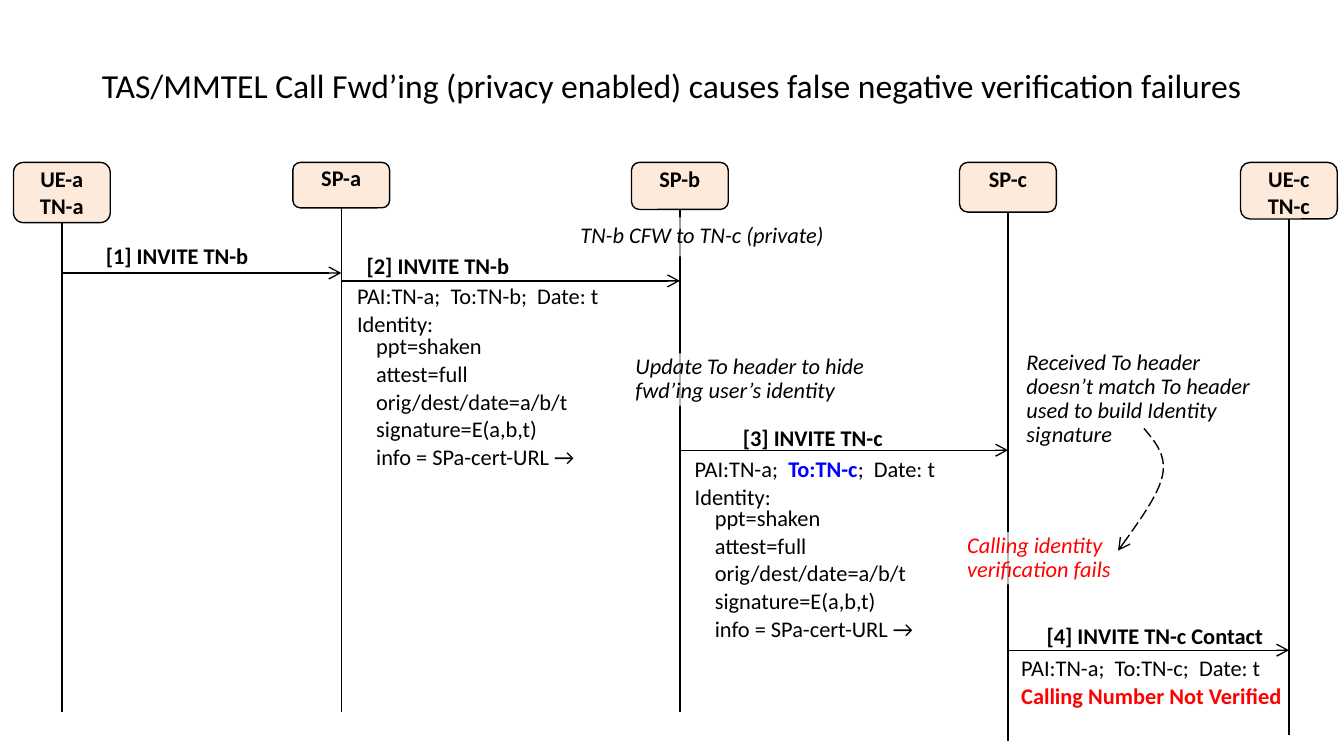
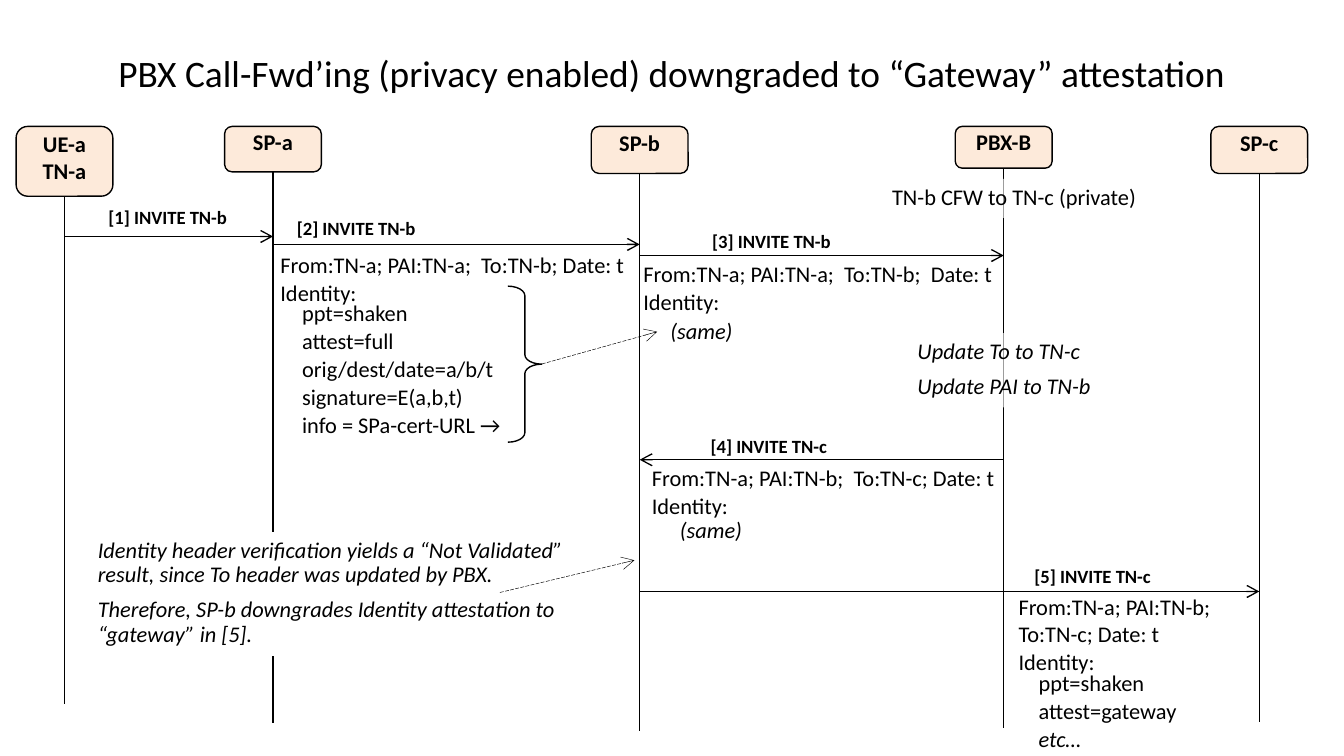
import lxml.etree
import pptx
import pptx.dml.color
import pptx.enum.dml
import pptx.enum.shapes
import pptx.enum.text
import pptx.oxml.ns
import pptx.util

Cm = pptx.util.Cm
Pt = pptx.util.Pt
qn = pptx.oxml.ns.qn

BLACK, WHITE, PEACH, RED, BLUE = "000000", "FFFFFF", "FDEADA", "FF0000", "0000FF"
FONT = "Calibri"
NODE_WIDTH = 1.83
SHAKEN_CLAIMS = ["ppt=shaken", "attest=full", "orig/dest/date=a/b/t",
                 "signature=E(a,b,t)", "info = SPa-cert-URL →"]


def rgb(hex_colour):
    return pptx.dml.color.RGBColor.from_string(hex_colour)


def bezier(start, control_1, control_2, end, steps=12):
    """Return points along a cubic curve, without its start."""
    points = []
    for step in range(1, steps + 1):
        t = step / steps
        weights = ((1 - t) ** 3, 3 * t * (1 - t) ** 2, 3 * t ** 2 * (1 - t), t ** 3)
        corners = (start, control_1, control_2, end)
        points.append(tuple(sum(w * corner[axis] for w, corner in zip(weights, corners))
                            for axis in (0, 1)))
    return points


class CallFlow:
    """Draws call-flow slides; all positions are in centimetres."""

    def __init__(self):
        self.deck = pptx.Presentation()
        self.deck.slide_width, self.deck.slide_height = Cm(25.4), Cm(14.29)
        self.shapes = None
        self.node_top = 0
        self.label_size = 12
        self.lifelines = []

    def start_slide(self, title, title_top, title_size, node_top, label_size):
        self.shapes = self.deck.slides.add_slide(self.deck.slide_layouts[6]).shapes
        self.node_top, self.label_size = node_top, label_size
        self.lifelines = []
        heading = self.shapes.add_textbox(Cm(1.27), Cm(title_top), Cm(22.86), Cm(2.39))
        heading.text_frame.word_wrap = True
        heading.text_frame.vertical_anchor = pptx.enum.text.MSO_ANCHOR.MIDDLE
        paragraph = heading.text_frame.paragraphs[0]
        paragraph.text = title
        paragraph.alignment = pptx.enum.text.PP_ALIGN.CENTER
        self.style_font(paragraph.font, size=title_size)

    def style_font(self, font, size=12, colour=BLACK, bold=False, italic=False):
        font.name, font.size = FONT, Pt(size)
        font.bold, font.italic = bold, italic
        font.color.rgb = rgb(colour)

    def style_line(self, outlined, width=0.75, dashed=False, arrow=False):
        line = outlined.line
        line.color.rgb = rgb(BLACK)
        line.width = Pt(width)
        if dashed:
            line.dash_style = pptx.enum.dml.MSO_LINE.LONG_DASH
        if arrow:
            outline = outlined.element.spPr.find(qn("a:ln"))
            lxml.etree.SubElement(outline, qn("a:tailEnd"), type="arrow")

    def line(self, start, end, **style):
        connector = self.shapes.add_connector(
            pptx.enum.shapes.MSO_CONNECTOR.STRAIGHT, *map(Cm, (*start, *end)))
        self.style_line(connector, **style)
        lxml.etree.SubElement(connector.element.spPr, qn("a:effectLst"))

    def pointer(self, start, end):
        self.line(start, end, width=0.25, dashed=True, arrow=True)

    def curved_pointer(self, start, *curves):
        points = [start]
        for curve in curves:
            points += bezier(points[-1], *curve)
        points = [(Cm(x), Cm(y)) for x, y in points]
        builder = self.shapes.build_freeform(*points[0])
        builder.add_line_segments(points[1:], close=False)
        pointer = builder.convert_to_shape()
        pointer.fill.background()
        pointer.shadow.inherit = False
        self.style_line(pointer, dashed=True, arrow=True)

    def preset(self, kind, left, top, width, height):
        shape = self.shapes.add_shape(kind, Cm(left), Cm(top), Cm(width), Cm(height))
        shape.shadow.inherit = False
        self.style_line(shape)
        return shape

    def brace(self, left, top, width, height):
        brace = self.preset(pptx.enum.shapes.MSO_SHAPE.RIGHT_BRACE, left, top, width, height)
        brace.fill.background()
        brace.adjustments[0], brace.adjustments[1] = 0.28, 0.5

    def node(self, names, centre, height, lifeline_end):
        """Draw a network element and the lifeline below it."""
        node = self.preset(pptx.enum.shapes.MSO_SHAPE.ROUNDED_RECTANGLE,
                           centre - NODE_WIDTH / 2, self.node_top, NODE_WIDTH, height)
        node.fill.solid()
        node.fill.fore_color.rgb = rgb(PEACH)
        frame = node.text_frame
        self.set_frame(frame, 0, 0, wrap=False)
        frame.text = "\n".join(names)
        for paragraph in frame.paragraphs:
            paragraph.alignment = pptx.enum.text.PP_ALIGN.CENTER
            self.style_font(paragraph.font, bold=True)
        self.line((centre, self.node_top + height), (centre, lifeline_end))
        self.lifelines.append(centre)

    def message(self, sender, receiver, y, label, label_left, label_top, label_width=3.2):
        """Draw an arrow between two lifelines, given by index, and its label."""
        self.line((self.lifelines[sender], y), (self.lifelines[receiver], y), arrow=True)
        self.roomy_text(label_left, label_top, label_width, 0.7, [label],
                        size=self.label_size, bold=True)

    def set_frame(self, frame, side_inset, end_inset, wrap):
        frame.margin_left = frame.margin_right = Cm(side_inset)
        frame.margin_top = frame.margin_bottom = Cm(end_inset)
        frame.word_wrap = wrap
        frame.vertical_anchor = pptx.enum.text.MSO_ANCHOR.TOP

    def text(self, left, top, width, height, lines, inset=0.03, wrap=True,
             before=2, opacity=None, **style):
        """Write lines; a line is a string or a list of (text, style changes)."""
        box = self.shapes.add_textbox(Cm(left), Cm(top), Cm(width), Cm(height))
        if opacity is not None:
            box.fill.solid()
            box.fill.fore_color.rgb = rgb(WHITE)
            if opacity < 100:
                colour = box.element.spPr.find(".//" + qn("a:srgbClr"))
                lxml.etree.SubElement(colour, qn("a:alpha"), val=str(opacity * 1000))
        frame = box.text_frame
        self.set_frame(frame, 0.25, inset, wrap)
        frame.auto_size = pptx.enum.text.MSO_AUTO_SIZE.SHAPE_TO_FIT_TEXT
        for index, line in enumerate(lines):
            paragraph = frame.add_paragraph() if index else frame.paragraphs[0]
            paragraph.line_spacing = 0.9
            paragraph.space_before = Pt(before)
            pieces = [(line, {})] if isinstance(line, str) else line
            shared = pieces[0][1] if len(pieces) == 1 else {}
            self.style_font(paragraph.font, **{**style, **shared})
            for words, changes in pieces:
                run = paragraph.add_run()
                run.text = words
                if changes and not shared:
                    self.style_font(run.font, **{**style, **changes})

    def roomy_text(self, *place_and_lines, before=6, wrap=False, **options):
        self.text(*place_and_lines, inset=0.13, before=before, wrap=wrap, **options)


def draw_tas_forwarding(flow):
    flow.start_slide("TAS/MMTEL Call Fwd’ing (privacy enabled) causes false negative "
                     "verification failures", 0.41, 18, node_top=3.07, label_size=12)
    for node in ((["UE-a", "TN-a"], 1.17, 1.14, 13.46),
                 (["SP-a"], 6.45, 0.86, 13.46),
                 (["SP-b"], 12.85, 0.89, 13.46),
                 (["SP-c"], 19.05, 0.94, 14),
                 (["UE-c", "TN-c"], 24.36, 1.07, 13.89)):
        flow.node(*node)
    flow.roomy_text(10.72, 4.11, 5.26, 0.74, ["TN-b CFW to TN-c (private)"],
                    opacity=61, italic=True)

    flow.message(0, 1, 5.16, "[1] INVITE TN-b", 1.75, 4.5)
    flow.message(1, 2, 5.31, "[2] INVITE TN-b", 6.68, 4.7)
    flow.message(2, 3, 8.51, "[3] INVITE TN-c", 13.79, 7.95)
    flow.message(3, 4, 12.29, "[4] INVITE TN-c Contact", 19.53, 11.68, 4.65)

    flow.text(6.5, 5.36, 6.1, 1.07, ["PAI:TN-a;  To:TN-b;  Date: t", "Identity:"])
    updated_to = [("PAI:TN-a;  ", {}), ("To:TN-c", {"colour": BLUE, "bold": True}),
                  (";  Date: t", {})]
    flow.text(12.88, 8.64, 5.31, 1.07, [updated_to, "Identity:"])
    for left, top in ((6.86, 6.3), (13.26, 9.55)):
        flow.text(left, top, 4.93, 2.64, SHAKEN_CLAIMS)
    not_verified = [("Calling Number Not Verified", {"colour": RED, "bold": True})]
    flow.roomy_text(19.05, 12.29, 5.51, 1.27,
                    ["PAI:TN-a;  To:TN-c;  Date: t", not_verified], before=2)

    flow.text(11.76, 6.68, 4.93, 0.99, ["Update To header to hide fwd’ing user’s identity"],
              opacity=70, italic=True)
    flow.text(18.03, 10.06, 3.96, 0.99, ["Calling identity verification fails"],
              opacity=70, italic=True, colour=RED)
    flow.text(19.15, 6.6, 4.93, 1.91,
              ["Received To header doesn’t match To header used to build Identity signature"],
              opacity=70, italic=True)
    flow.curved_pointer((21.62, 8.1),
                        ((21.84, 8.36), (22.05, 8.61), (21.97, 8.99)),
                        ((21.89, 9.37), (21.51, 9.88), (21.13, 10.41)))


def draw_pbx_forwarding(flow):
    flow.start_slide("PBX Call-Fwd’ing (privacy enabled) downgraded to “Gateway” attestation",
                     0.18, 20, node_top=2.39, label_size=10)
    for node in ((["UE-a", "TN-a"], 1.22, 1.32, 13.31),
                 (["SP-a"], 5.16, 0.86, 13.67),
                 (["SP-b"], 12.09, 0.89, 13.82),
                 (["PBX-B"], 18.97, 0.79, 13.77),
                 (["SP-c"], 23.8, 0.89, 13.64)):
        flow.node(*node)
    flow.roomy_text(16.61, 3.38, 5.18, 0.74, ["TN-b CFW to TN-c (private)"], opacity=61)

    flow.message(0, 1, 4.47, "[1] INVITE TN-b", 1.8, 3.81)
    flow.message(1, 2, 4.62, "[2] INVITE TN-b", 5.36, 4.01)
    flow.message(2, 3, 4.83, "[3] INVITE TN-b", 13.21, 4.27)
    flow.message(3, 2, 8.69, "[4] INVITE TN-c", 13.18, 8.13)
    flow.message(2, 4, 11.18, "[5] INVITE TN-c", 19.3, 10.59)

    flow.text(5.05, 4.78, 7.82, 1.07, ["From:TN-a; PAI:TN-a;  To:TN-b; Date: t", "Identity:"])
    flow.text(11.91, 4.95, 7.47, 2.64,
              ["From:TN-a; PAI:TN-a;  To:TN-b;  Date: t", "Identity:"])
    flow.text(12.07, 8.81, 7.32, 1.07, ["From:TN-a; PAI:TN-b;  To:TN-c; Date: t", "Identity:"])
    flow.text(19, 11.23, 4.47, 1.57,
              ["From:TN-a; PAI:TN-b;", "To:TN-c; Date: t", "Identity:"])
    flow.text(5.46, 5.69, 4.45, 2.64, SHAKEN_CLAIMS)
    flow.text(19.38, 12.67, 4.24, 1.57,
              ["ppt=shaken", "attest=gateway", [("etc…", {"italic": True})]])

    flow.brace(9.6, 5.41, 0.64, 2.95)
    flow.pointer((10.24, 6.88), (12.42, 6.27))
    for left, top in ((12.42, 6.02), (12.6, 9.78)):
        flow.text(left, top, 1.96, 0.53, ["(same)"], italic=True)

    flow.roomy_text(17.09, 6.3, 3.96, 1.4, ["Update To to TN-c", "Update PAI to TN-b"],
                    opacity=61, italic=True)
    flow.roomy_text(1.6, 10.06, 9.58, 2.34,
                    ["Identity header verification yields a “Not Validated” result, "
                     "since To header was updated by PBX.",
                     "Therefore, SP-b downgrades Identity attestation to “gateway” in [5]."],
                    wrap=True, opacity=100, italic=True)
    flow.pointer((9.45, 11.2), (11.99, 10.59))


def main():
    flow = CallFlow()
    draw_tas_forwarding(flow)
    draw_pbx_forwarding(flow)
    flow.deck.save("out.pptx")


if __name__ == "__main__":
    main()
